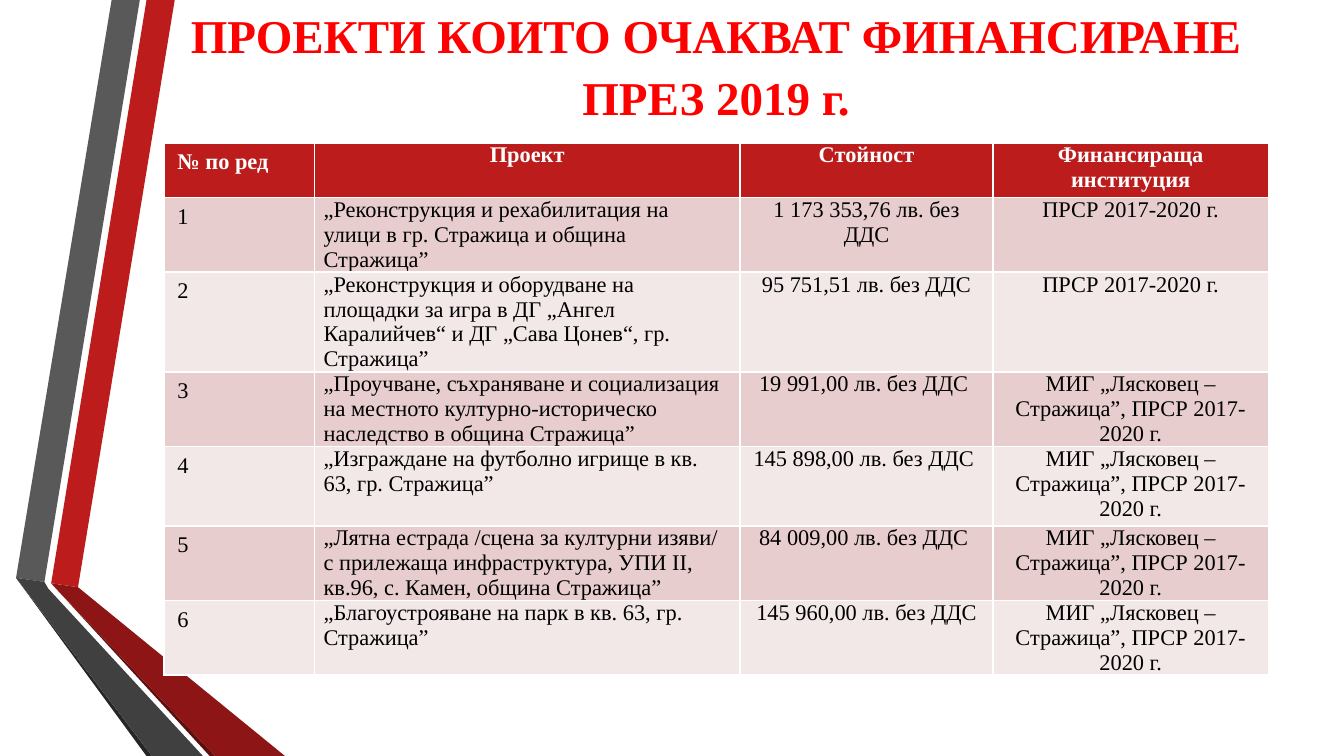
from dataclasses import dataclass

import pptx
import pptx.dml.color
import pptx.enum.text
import pptx.util

Pt = pptx.util.Pt
RGBColor = pptx.dml.color.RGBColor
Align = pptx.enum.text.PP_ALIGN
Anchor = pptx.enum.text.MSO_ANCHOR

FONT = "Times New Roman"
RED = RGBColor(0xBC, 0x1C, 0x1C)
DEEP = RGBColor(0x8D, 0x15, 0x15)
MAROON = RGBColor(0x5E, 0x0E, 0x0E)
GREY = RGBColor(0x59, 0x59, 0x59)
DARK = RGBColor(0x40, 0x40, 0x40)
COAL = RGBColor(0x26, 0x26, 0x26)
BRIGHT = RGBColor(0xFF, 0x00, 0x00)
WHITE = RGBColor(0xFF, 0xFF, 0xFF)
BLACK = RGBColor(0x00, 0x00, 0x00)
ROSE = RGBColor(0xE7, 0xCD, 0xCD)
PALE = RGBColor(0xF3, 0xE8, 0xE8)

WIDE, HIGH = 720, 405
LEFT, SPAN = 87.8, 591.8


@dataclass
class Band:
    color: RGBColor
    points: list[tuple[float, float]]


@dataclass
class Project:
    name: str
    cost: str
    funder: str


BANDS = [
    Band(RED, [(27.4, 312.5), (41.8, 314.6), (93.6, 0), (78.5, 0)]),
    Band(GREY, [(74.9, 0), (59.8, 0), (8.6, 309.6), (23.8, 311.8)]),
    Band(COAL, [(8.6, 309.6), (78.5, HIGH), (81.4, HIGH)]),
    Band(MAROON, [(27.4, 312.5), (112.3, HIGH), (115.2, HIGH)]),
    Band(DEEP, [(27.4, 312.5), (115.2, HIGH), (152.6, HIGH), (41.8, 314.6)]),
    Band(DARK, [(108.7, HIGH), (25.9, 315.4), (23.8, 311.8), (8.6, 309.6), (81.4, HIGH)]),
]

STATE = "ПРСР 2017-2020 г."
LOCAL = "МИГ „Лясковец – Стражица”, ПРСР 2017-2020 г."
HEADS = ["№ по ред", "Проект", "Стойност", "Финансираща институция"]
PROJECTS = [
    Project("„Реконструкция и рехабилитация на улици в гр. Стражица и община Стражица”",
            "1 173 353,76 лв. без ДДС", STATE),
    Project("„Реконструкция и оборудване на площадки за игра в ДГ „Ангел Каралийчев“ "
            "и ДГ „Сава Цонев“, гр. Стражица”",
            "95 751,51 лв. без ДДС", STATE),
    Project("„Проучване, съхраняване и социализация на местното културно-историческо "
            "наследство в община Стражица”",
            "19 991,00 лв. без ДДС ", LOCAL),
    Project("„Изграждане на футболно игрище в кв. 63, гр. Стражица”",
            "145 898,00 лв. без ДДС ", LOCAL),
    Project("„Лятна естрада /сцена за културни изяви/ с прилежаща инфраструктура, "
            "УПИ II, кв.96, с. Камен, община Стражица”",
            "84 009,00 лв. без ДДС ", LOCAL),
    Project("„Благоустрояване на парк в кв. 63, гр. Стражица”",
            "145 960,00 лв. без ДДС", LOCAL),
]
COLS = [80.6, 228.2, 135.4, 147.6]
ROWS = [29.3, 29.3, 29.3, 29.3, 42.5, 29.3, 29.3]


def add_run(para, text: str, size: float, color: RGBColor, bold: bool) -> None:
    run = para.add_run()
    run.text = text
    run.font.name = FONT
    run.font.size = Pt(size)
    run.font.bold = bold
    run.font.color.rgb = color


def draw_band(slide, band: Band) -> None:
    spots = [(Pt(x), Pt(y)) for x, y in band.points]
    pen = slide.shapes.build_freeform(*spots[0])
    pen.add_line_segments(spots[1:], close=True)
    shape = pen.convert_to_shape()
    shape.shadow.inherit = False
    shape.fill.solid()
    shape.fill.fore_color.rgb = band.color
    shape.line.fill.background()


def draw_title(slide, text: str) -> None:
    title = slide.shapes.title
    title.left, title.top = Pt(LEFT), Pt(10.8)
    title.width, title.height = Pt(SPAN), Pt(77.8)
    frame = title.text_frame
    frame.word_wrap = True
    frame.auto_size = pptx.enum.text.MSO_AUTO_SIZE.NONE
    frame.vertical_anchor = Anchor.MIDDLE
    frame.margin_left = frame.margin_right = frame.margin_top = 0
    frame.margin_bottom = Pt(32)
    para = frame.paragraphs[0]
    para.alignment = Align.CENTER
    para.line_spacing = 1.1
    add_run(para, text, 25.2, BRIGHT, True)


def fill_cell(cell, text: str, row: int, col: int) -> None:
    head = row == 0
    cell.fill.solid()
    cell.fill.fore_color.rgb = RED if head else (PALE, ROSE)[row % 2]
    cell.vertical_anchor = Anchor.TOP
    if col > 0:
        cell.margin_left = cell.margin_right = Pt(5)
        cell.margin_top = cell.margin_bottom = 0
    para = cell.text_frame.paragraphs[0]
    mid = col > 1 or (head and col == 1)
    para.alignment = Align.CENTER if mid else Align.LEFT
    add_run(para, text, 12, WHITE if head else BLACK, head)


def draw_table(slide, grid: list[list[str]]) -> None:
    frame = slide.shapes.add_table(
        len(grid), len(COLS), Pt(LEFT), Pt(76.6), Pt(SPAN), Pt(303))
    table = frame.table
    for col, width in zip(table.columns, COLS):
        col.width = Pt(width)
    for row, height in zip(table.rows, ROWS):
        row.height = Pt(height)
    frame.height = Pt(303)
    for r, texts in enumerate(grid):
        for c, text in enumerate(texts):
            fill_cell(table.cell(r, c), text, r, c)


def main() -> None:
    deck = pptx.Presentation()
    deck.slide_width, deck.slide_height = Pt(WIDE), Pt(HIGH)
    slide = deck.slides.add_slide(deck.slide_layouts[5])
    for band in BANDS:
        draw_band(slide, band)
    draw_title(slide, "ПРОЕКТИ КОИТО ОЧАКВАТ ФИНАНСИРАНЕ ПРЕЗ 2019 г.")
    grid = [HEADS] + [[str(n), p.name, p.cost, p.funder]
                      for n, p in enumerate(PROJECTS, 1)]
    draw_table(slide, grid)
    deck.save("out.pptx")


if __name__ == "__main__":
    main()
